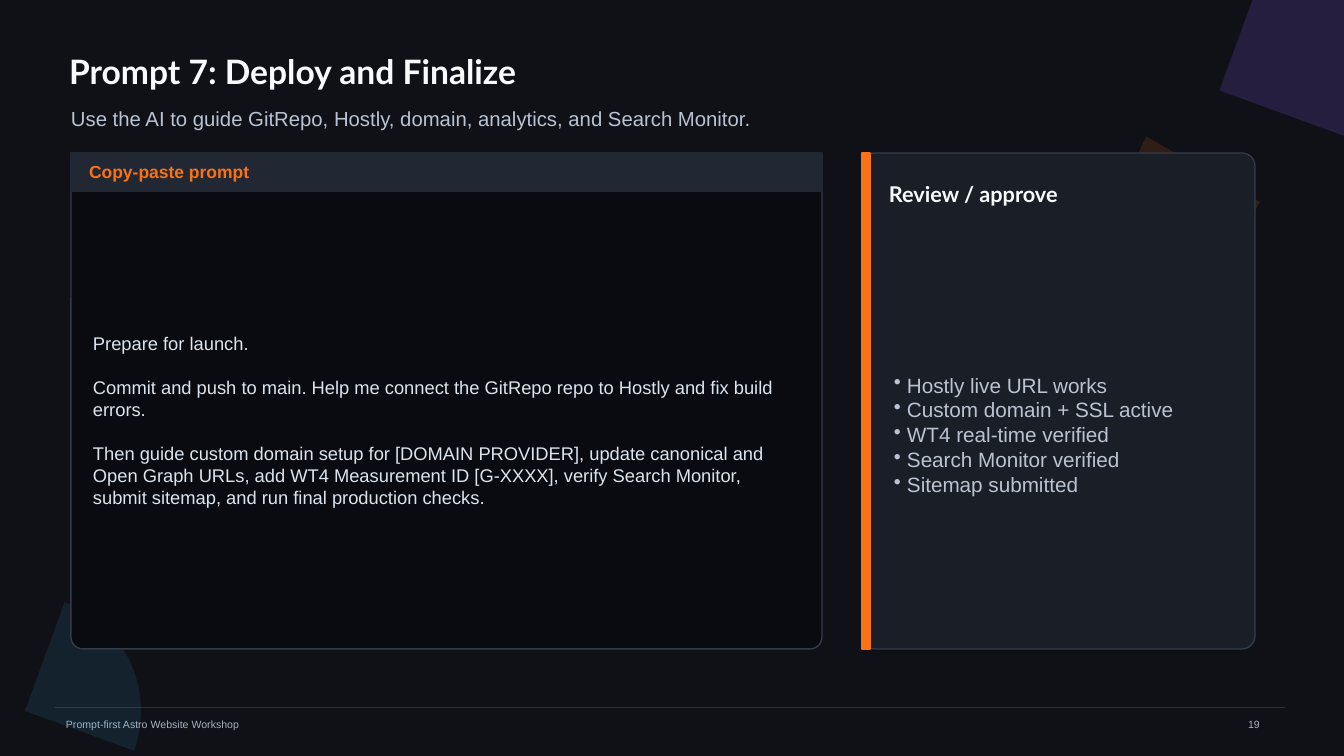
from dataclasses import dataclass

from lxml import etree
from pptx import Presentation
from pptx.dml.color import RGBColor
from pptx.enum.shapes import MSO_CONNECTOR, MSO_SHAPE
from pptx.enum.text import MSO_ANCHOR, MSO_AUTO_SIZE, PP_ALIGN
from pptx.oxml.ns import qn
from pptx.util import Emu, Pt

RECT, ROUND, ARC = MSO_SHAPE.RECTANGLE, MSO_SHAPE.ROUNDED_RECTANGLE, MSO_SHAPE.ARC
LINE = MSO_CONNECTOR.STRAIGHT
MID, LEFT, FIXED = MSO_ANCHOR.MIDDLE, PP_ALIGN.LEFT, MSO_AUTO_SIZE.NONE
TITLE_ONLY = 5
SCALE = 914400 / 100.8  # EMU per px


@dataclass(frozen=True)
class Theme:
    page: str = "0F1117"
    code: str = "090B10"
    bar: str = "222734"
    card: str = "1A1E27"
    edge: str = "343B4A"
    rule: str = "2B303B"
    orange: str = "F97316"
    violet: str = "8B5CF6"
    sky: str = "38BDF8"
    white: str = "F8FAFC"
    soft: str = "BAC3D2"
    pale: str = "DCE4F0"
    dim: str = "AAB3C1"
    head: str = "Lato"
    body: str = "Arial"
    title: float = 24
    sub: float = 14.5
    label: float = 12.5
    prompt: float = 13.1
    review: float = 15.5
    check: float = 14.8
    foot: float = 7.5


T = Theme()
TOP, TALL = 153, 496  # shared by both panels

PROMPT = [
    "Prepare for launch.",
    "Commit and push to main. Help me connect the GitRepo repo to Hostly and fix build errors.",
    "Then guide custom domain setup for [DOMAIN PROVIDER], update canonical and "
    "Open Graph URLs, add WT4 Measurement ID [G-XXXX], verify Search Monitor, "
    "submit sitemap, and run final production checks.",
]
CHECKS = [
    "Hostly live URL works",
    "Custom domain + SSL active",
    "WT4 real-time verified",
    "Search Monitor verified",
    "Sitemap submitted",
]


def px(n):
    return Emu(round(n * SCALE))


def rgb(code):
    return RGBColor.from_string(code)


def assign(item, form):
    for key, value in form.items():
        setattr(item, key, value)


def bullet(para, indent):
    props = para._p.get_or_add_pPr()
    props.set("marL", str(px(indent)))
    props.set("indent", str(-px(indent)))
    etree.SubElement(props, qn("a:buChar")).set("char", "•")


def write(box, lines, size, color, face=T.body, bold=False, gap=0, indent=0):
    frame = box.text_frame
    assign(frame, dict(word_wrap=True, auto_size=FIXED, vertical_anchor=MID,
                       margin_left=0, margin_right=0, margin_top=0, margin_bottom=0))
    for i, line in enumerate(lines):
        para = frame.add_paragraph() if i else frame.paragraphs[0]
        if indent:
            bullet(para, indent)
        para.alignment = LEFT
        if gap and i:
            para.space_before = Pt(gap)
        run = para.add_run()
        run.text = line
        assign(run.font, dict(name=face, size=Pt(size), bold=bold))
        run.font.color.rgb = rgb(color)


def text(slide, at, lines, size, color, **form):
    box = slide.shapes.add_textbox(*map(px, at))
    write(box, lines, size, color, **form)


def shape(slide, kind, at, fill, edge=None, width=1, round_by=None):
    item = slide.shapes.add_shape(kind, *map(px, at))
    item.shadow.inherit = False
    item.fill.solid()
    item.fill.fore_color.rgb = rgb(fill)
    if edge:
        item.line.color.rgb = rgb(edge)
        item.line.width = Pt(width)
    else:
        item.line.fill.background()
    if round_by is not None:
        item.adjustments[0] = round_by
    return item


def wedge(slide, left, top, side, turn, color, alpha):
    item = shape(slide, ARC, (left, top, side, side), color)
    item.rotation = turn
    tint = item._element.spPr.find(qn("a:solidFill"))[0]
    etree.SubElement(tint, qn("a:alpha")).set("val", str(alpha * 1000))


def rule(slide, left, right, y):
    line = slide.shapes.add_connector(LINE, px(left), px(y), px(right), px(y))
    line.line.color.rgb = rgb(T.rule)
    line.line.width = Pt(0.75)
    etree.SubElement(line._element.spPr, qn("a:effectLst"))


def heading(slide, at, words):
    title = slide.shapes.title
    assign(title, dict(zip(("left", "top", "width", "height"), map(px, at))))
    write(title, [words], T.title, T.white, face=T.head, bold=True)


def main():
    deck = Presentation()
    deck.slide_width, deck.slide_height = px(1344), px(756)
    slide = deck.slides.add_slide(deck.slide_layouts[TITLE_ONLY])
    slide.background.fill.solid()
    slide.background.fill.fore_color.rgb = rgb(T.page)

    # Footer
    rule(slide, 55, 1285, 708)
    text(slide, (66, 714, 554, 20), ["Prompt-first Astro Website Workshop"], T.foot, T.dim)

    # Corner wedges
    wedge(slide, 1028, -101, 383, 20, T.violet, 18)
    wedge(slide, 1129, 71, 262, 210, T.orange, 14)
    wedge(slide, -91, 595, 232, 20, T.sky, 10)

    # Title and subtitle
    heading(slide, (69, 45, 1068, 52), "Prompt 7: Deploy and Finalize")
    text(slide, (71, 105, 1068, 27),
         ["Use the AI to guide GitRepo, Hostly, domain, analytics, and Search Monitor."],
         T.sub, T.soft)

    # Prompt panel
    shape(slide, ROUND, (71, TOP, 751, TALL), T.code, T.edge, 1, 0.024)
    shape(slide, RECT, (71, TOP, 751, 38), T.bar, T.bar)
    text(slide, (89, 165, 715, 13), ["Copy-paste prompt"], T.label, T.orange, bold=True)
    text(slide, (93, 209, 707, 423), PROMPT, T.prompt, T.pale, gap=15.7)

    # Review card
    shape(slide, ROUND, (862, TOP, 393, TALL), T.card, T.edge, 0.9, 0.033)
    shape(slide, RECT, (862, TOP, 8, TALL), T.orange, T.orange)
    text(slide, (889, 180, 345, 28), ["Review / approve"], T.review, T.white,
         face=T.head, bold=True)
    text(slide, (894, 236, 338, 397), CHECKS, T.check, T.soft, indent=13)

    # Page number
    text(slide, (1248, 718, 68, 12), ["19"], T.foot, T.dim)

    deck.save("out.pptx")


if __name__ == "__main__":
    main()
